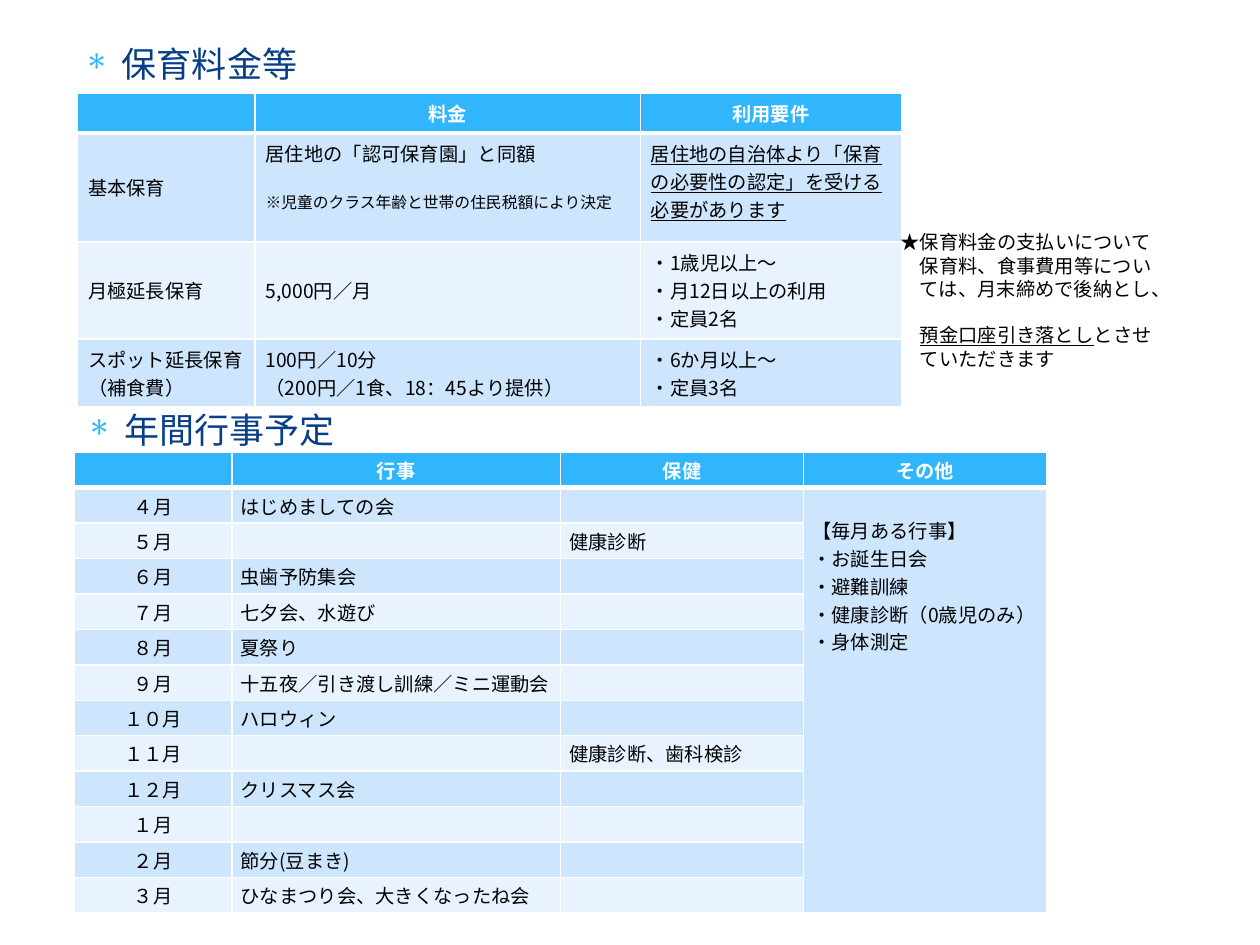
import dataclasses
import typing

import lxml.etree
import pptx
import pptx.dml.color
import pptx.enum.text
import pptx.oxml.ns
import pptx.util

Pt = pptx.util.Pt
ALIGN = pptx.enum.text.PP_ALIGN
MID = pptx.enum.text.MSO_ANCHOR.MIDDLE
TOP = pptx.enum.text.MSO_ANCHOR.TOP
qn = pptx.oxml.ns.qn

FONT = "Noto Sans CJK JP"
WHITE, BLACK, NAVY = "FFFFFF", "000000", "073E87"
SKY, BAND, PALE = "31B6FD", "CEE5FE", "E8F3FF"


@dataclasses.dataclass
class Line:
    text: str
    tail: str = ""  # plain text after an underlined part
    size: float = 11
    under: bool = False
    gap: float = 0


@dataclasses.dataclass
class Cell:
    lines: typing.Sequence = ()
    anchor: typing.Any = MID
    align: typing.Any = ALIGN.LEFT
    top: typing.Optional[float] = None


@dataclasses.dataclass
class Grid:
    left: float
    top: float
    cols: list
    rows: list
    side: float  # left and right cell margin
    pad: float  # top and bottom cell margin
    cells: list


def color(code: str):
    return pptx.dml.color.RGBColor.from_string(code)


def write(frame, lines, *, tint=BLACK, bold=False, align=ALIGN.LEFT,
          size=None, space=None, hang=0, bullet=None) -> None:
    frame.word_wrap = True
    for i, line in enumerate(lines):
        line = Line(line) if isinstance(line, str) else line
        para = frame.paragraphs[0] if i == 0 else frame.add_paragraph()
        para.alignment = align
        para.space_before = Pt(line.gap)
        if space:
            para.line_spacing = Pt(space)
        for text, under in ((line.text, line.under), (line.tail, False)):
            if not text:
                continue
            run = para.add_run()
            run.text = text
            font = run.font
            font.size, font.bold, font.underline = Pt(size or line.size), bold, under
            font.name = FONT
            font.color.rgb = color(tint)
            east = lxml.etree.SubElement(font._element, qn("a:ea"))
            east.set("typeface", FONT)
        props = para._p.get_or_add_pPr()
        if hang:
            first = bullet or i == 0
            props.set("marL", str(Pt(hang)))
            props.set("indent", str(-Pt(hang) if first else 0))
        if bullet:
            paint = lxml.etree.SubElement(props, qn("a:buClr"))
            lxml.etree.SubElement(paint, qn("a:srgbClr")).set("val", SKY)
            lxml.etree.SubElement(props, qn("a:buChar")).set("char", bullet)


def add_box(slide, left: float, top: float, wide: float, high: float,
            lines, anchor=TOP, **form) -> None:
    box = slide.shapes.add_textbox(Pt(left), Pt(top), Pt(wide), Pt(high))
    box.text_frame.vertical_anchor = anchor
    write(box.text_frame, lines, **form)


def edge(cell, row: int) -> None:
    props = cell._tc.get_or_add_tcPr()
    for side in "LRTB":
        thick = (side == "B" and row == 0) or (side == "T" and row == 1)
        line = lxml.etree.SubElement(props, qn("a:ln" + side))
        line.set("w", str(Pt(3 if thick else 1)))
        fill = lxml.etree.SubElement(line, qn("a:solidFill"))
        lxml.etree.SubElement(fill, qn("a:srgbClr")).set("val", WHITE)


def add_grid(slide, grid: Grid):
    table = slide.shapes.add_table(
        len(grid.rows), len(grid.cols), Pt(grid.left), Pt(grid.top),
        Pt(sum(grid.cols)), Pt(sum(grid.rows))).table
    table.first_row = table.horz_banding = False
    for col, wide in zip(table.columns, grid.cols):
        col.width = Pt(wide)
    for r, high in enumerate(grid.rows):
        table.rows[r].height = Pt(high)
        shade = SKY if r == 0 else (BAND if r % 2 else PALE)
        for c, item in enumerate(grid.cells[r]):
            cell = table.cell(r, c)
            edge(cell, r)
            cell.fill.solid()
            cell.fill.fore_color.rgb = color(shade)
            cell.vertical_anchor = item.anchor
            cell.margin_left = cell.margin_right = Pt(grid.side)
            cell.margin_bottom = Pt(grid.pad)
            cell.margin_top = Pt(grid.pad if item.top is None else item.top)
            if item.lines:
                write(cell.text_frame, item.lines, align=item.align,
                      tint=BLACK if r else WHITE, bold=r == 0)
            else:
                end = lxml.etree.SubElement(
                    cell.text_frame.paragraphs[0]._p, qn("a:endParaRPr"))
                end.set("sz", "1100")
    return table


def head(*names: str) -> list:
    return [Cell([name] if name else [], align=ALIGN.CENTER) for name in names]


# Fee table
FEES = Grid(44.3, 53, [101.5, 220.1, 149.2], [23, 62.3, 55.4, 38.9], 6, 3.5, [
    head("", "料金", "利用要件"),
    [Cell(["基本保育"]),
     Cell(["居住地の「認可保育園」と同額",
           Line("※児童のクラス年齢と世帯の住民税額により決定", size=9, gap=13)], TOP),
     Cell([Line("居住地の自治体より「保育の必要性の認定」を受ける必要があります",
                under=True)], TOP)],
    [Cell(["月極延長保育"]), Cell(["5,000円／月"]),
     Cell(["・1歳児以上～", "・月12日以上の利用", "・定員2名"], TOP)],
    [Cell(["スポット延長保育", "（補食費）"]),
     Cell(["100円／10分", "（200円／1食、18：45より提供）"], TOP),
     Cell(["・6か月以上～", "・定員3名"], TOP)],
])

# Yearly events: month, event, health check
YEAR = [
    ("４月", "はじめましての会", ""),
    ("５月", "", "健康診断"),
    ("６月", "虫歯予防集会", ""),
    ("７月", "七夕会、水遊び", ""),
    ("８月", "夏祭り", ""),
    ("９月", "十五夜／引き渡し訓練／ミニ運動会", ""),
    ("１０月", "ハロウィン", ""),
    ("１１月", "", "健康診断、歯科検診"),
    ("１２月", "クリスマス会", ""),
    ("１月", "", ""),
    ("２月", "節分(豆まき)", ""),
    ("３月", "ひなまつり会、大きくなったね会", ""),
]
EACH = Cell(["【毎月ある行事】", "・お誕生日会", "・避難訓練",
             "・健康診断（0歳児のみ）", "・身体測定"], TOP, ALIGN.JUSTIFY, 16)
NOTE = ["★保育料金の支払いについて", "保育料、食事費用等につい", "ては、月末締めで後納とし、",
        Line("預金口座引き落とし", "とさせ", under=True, gap=13.3), "ていただきます"]


def month(row: int, name: str, *plans: str) -> list:
    cells = [Cell([plan] if plan else [], align=ALIGN.JUSTIFY) for plan in plans]
    return head(name) + cells + [EACH if row == 0 else Cell()]


def main() -> None:
    deck = pptx.Presentation()
    deck.slide_width, deck.slide_height = Pt(720), Pt(540)
    slide = deck.slides.add_slide(deck.slide_layouts[6])
    title = dict(tint=NAVY, size=20, hang=21.6, bullet="∗")

    # Fees
    add_box(slide, 41, 20.5, 198.7, 33.8, ["保育料金等"], **title)
    add_grid(slide, FEES)

    # Events
    cells = [head("", "行事", "保健", "その他")]
    cells += [month(i, *row) for i, row in enumerate(YEAR)]
    table = add_grid(slide, Grid(42.5, 258.5, [90, 187.8, 138.9, 138.9],
                                 [20.25] * len(cells), 5, 0, cells))
    table.cell(1, 3).merge(table.cell(len(YEAR), 3))
    add_box(slide, 42.5, 224.6, 175.7, 41.8, ["年間行事予定"], MID, **title)

    # Payment note
    add_box(slide, 507.6, 128.2, 170, 74.2, NOTE, space=13.3, hang=11)
    deck.save("out.pptx")


if __name__ == "__main__":
    main()
